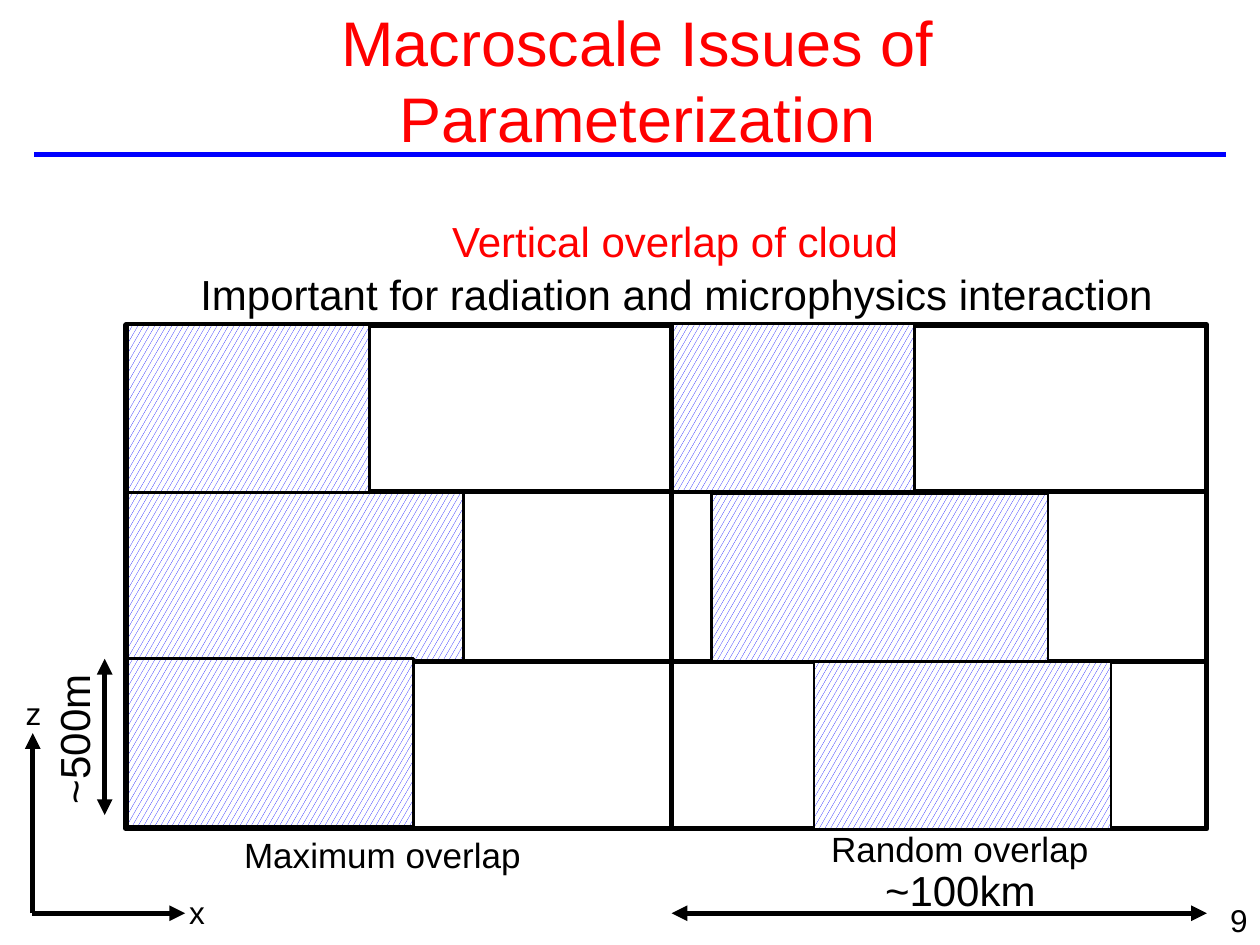
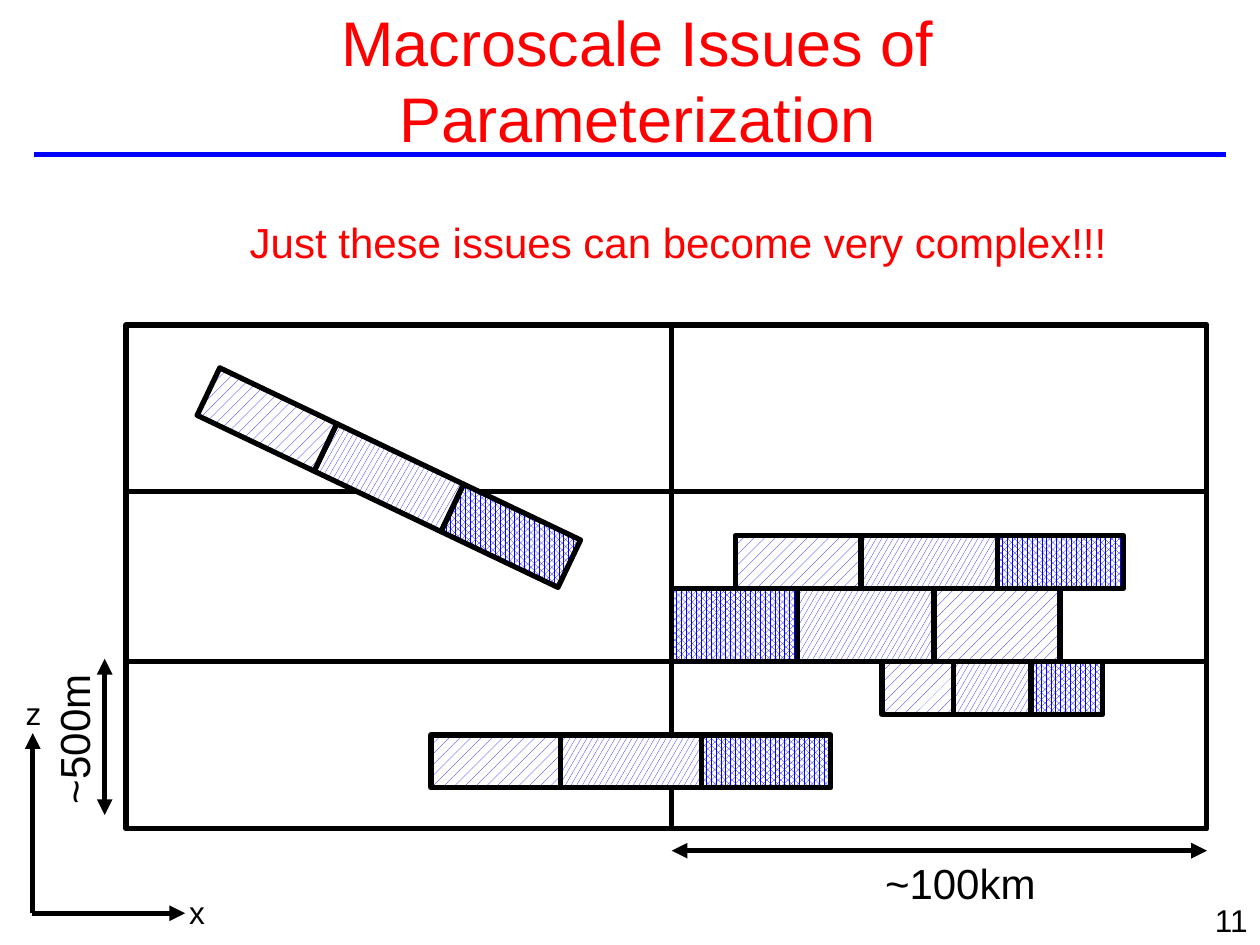
"""Build two slides on cloud overlap inside a model grid."""
import math
import pptx
import pptx.util
import pptx.dml.color
import pptx.enum.dml
import pptx.enum.shapes
import pptx.enum.text
import pptx.oxml

Cm, Pt = pptx.util.Cm, pptx.util.Pt
RGB = pptx.dml.color.RGBColor.from_string
ALIGN = pptx.enum.text.PP_ALIGN
ANCHOR = pptx.enum.text.MSO_ANCHOR
SHAPE = pptx.enum.shapes.MSO_SHAPE
HATCH = pptx.enum.dml.MSO_PATTERN
INK = {"red": "FF0000", "blue": "0000FF", "black": "000000", "white": "FFFFFF"}
NS = 'xmlns:a="http://schemas.openxmlformats.org/drawingml/2006/main"'


def write(page, text, at, size=24, ink="black", align=ALIGN.CENTER,
          anchor=ANCHOR.MIDDLE, wrap=False, turn=0):
    """Add a text box."""
    box = page.shapes.add_textbox(*map(Cm, at))
    box.rotation = turn
    frame = box.text_frame
    frame.word_wrap = wrap
    frame.vertical_anchor = anchor
    para = frame.paragraphs[0]
    para.alignment = align
    run = para.add_run()
    run.text = text
    run.font.name = "Arial"
    run.font.size = Pt(size)
    run.font.color.rgb = RGB(INK[ink])


def draw(page, x1, y1, x2, y2, ink="black", ends=()):
    """Add a straight line with arrowheads at the named ends."""
    line = page.shapes.add_connector(
        pptx.enum.shapes.MSO_CONNECTOR.STRAIGHT, Cm(x1), Cm(y1), Cm(x2), Cm(y2))
    line.line.width = Pt(3)
    line.line.color.rgb = RGB(INK[ink])
    for end in ends:
        line.line._ln.append(pptx.oxml.parse_xml(f'<a:{end}End {NS} type="triangle"/>'))
    line._element.spPr.append(pptx.oxml.parse_xml(f"<a:effectLst {NS}/>"))


LEFT, MID, RIGHT = 2.54, 13.54, 24.33
TOP, ROWS, BASE = 6.55, (9.91, 13.34), 16.71
BOTH = ("head", "tail")

clouds = [(x, y, wide, 3.38, HATCH.LARGE_CONFETTI, 0) for x, y, wide in (
    (14.35, 9.96, 6.78), (13.56, 6.53, 4.88), (16.41, 13.34, 5.99),
    (2.57, 9.93, 6.78), (2.57, 6.55, 4.88), (2.57, 13.28, 5.77))]

stacks = (
    (13.54, 11.86, 7.83, 1.48, 0, -1),
    (14.82, 10.8, 7.83, 1.06, 0, 1),
    (17.78, 13.34, 4.45, 1.06, 0, 1),
    (8.69, 14.82, 8.06, 1.06, 0, 1),
    (3.81, 9.1, 8.06, 1.06, 25.5, 1),
)
parts = ((HATCH.PERCENT_75, 12, 1), (HATCH.LARGE_CONFETTI, 13, 0),
         (HATCH.PERCENT_20, 12, -1))
layers = []
for x, y, wide, tall, turn, way in stacks:
    slope = math.radians(turn)
    for hatch, share, side in parts:
        part = wide * share / 37
        step = way * side * wide * 12.5 / 37
        layers.append((x + (wide - part) / 2 + step * math.cos(slope),
                       y + step * math.sin(slope), part, tall, hatch, turn))

pages = (
    dict(number="9", bars=clouds, edge=1.5, span=18.41, label=17.3, notes=(
        ("Vertical overlap of cloud", (8.81, 4.22, 9.6, 1.27), 24, "red"),
        ("Important for radiation and microphysics interaction",
         (3.66, 5.28, 19.96, 1.27), 24, "black"),
        ("Maximum overlap", (4.65, 16.66, 6.12, 1.12), 20, "black"),
        ("Random overlap", (16.38, 16.54, 5.94, 1.12), 20, "black"))),
    dict(number="11", bars=layers, edge=3, span=17.15, label=17.15, notes=(
        ("Just these issues can become very complex!!!",
         (4.78, 4.24, 17.78, 1.27), 24, "red"),)),
)

deck = pptx.Presentation()
deck.slide_width, deck.slide_height = Cm(25.4), Cm(19.05)

for plan in pages:
    page = deck.slides.add_slide(deck.slide_layouts[6])
    draw(page, 0.69, 3.12, 24.71, 3.12, ink="blue")
    write(page, "Macroscale Issues of Parameterization", (2.69, 0.43, 20.32, 2.34),
          size=36, ink="red", wrap=True)
    write(page, plan["number"], (20.12, 18.03, 5.28, 1.27), size=18,
          align=ALIGN.RIGHT, anchor=ANCHOR.TOP, wrap=True)

    frame = page.shapes.add_shape(
        SHAPE.RECTANGLE, Cm(LEFT), Cm(TOP), Cm(RIGHT - LEFT), Cm(BASE - TOP))
    frame.shadow.inherit = False
    frame.fill.solid()
    frame.fill.fore_color.rgb = RGB(INK["white"])
    frame.line.color.rgb = RGB(INK["black"])
    frame.line.width = Pt(3)
    for row in ROWS:
        draw(page, LEFT, row, RIGHT, row)
    draw(page, MID, TOP, MID, BASE)

    draw(page, RIGHT, plan["span"], MID, plan["span"], ends=BOTH)
    draw(page, 2.11, 13.28, 2.11, 16.43, ends=BOTH)
    write(page, "~500m", (-0.08, 14.27, 3.12, 1.27), turn=270)
    write(page, "~100km", (17.58, plan["label"], 3.56, 1.27))

    for x, y, wide, tall, hatch, turn in plan["bars"]:
        bar = page.shapes.add_shape(
            SHAPE.RECTANGLE, Cm(x), Cm(y), Cm(wide), Cm(tall))
        bar.rotation = turn
        bar.shadow.inherit = False
        bar.fill.patterned()
        bar.fill.pattern = hatch
        bar.fill.fore_color.rgb = RGB(INK["blue"])
        bar.fill.back_color.rgb = RGB(INK["white"])
        bar.line.color.rgb = RGB(INK["black"])
        bar.line.width = Pt(plan["edge"])

    for text, at, size, ink in plan["notes"]:
        write(page, text, at, size=size, ink=ink)

    draw(page, 0.66, 18.41, 0.66, 14.78, ends=("tail",))
    draw(page, 0.64, 18.41, 3.73, 18.41, ends=("tail",))
    for name, x, y in (("x", 3.38, 17.88), ("z", 0.08, 13.87)):
        write(page, name, (x, y, 1.19, 1.02), size=18, anchor=ANCHOR.TOP, wrap=True)

deck.save("out.pptx")
